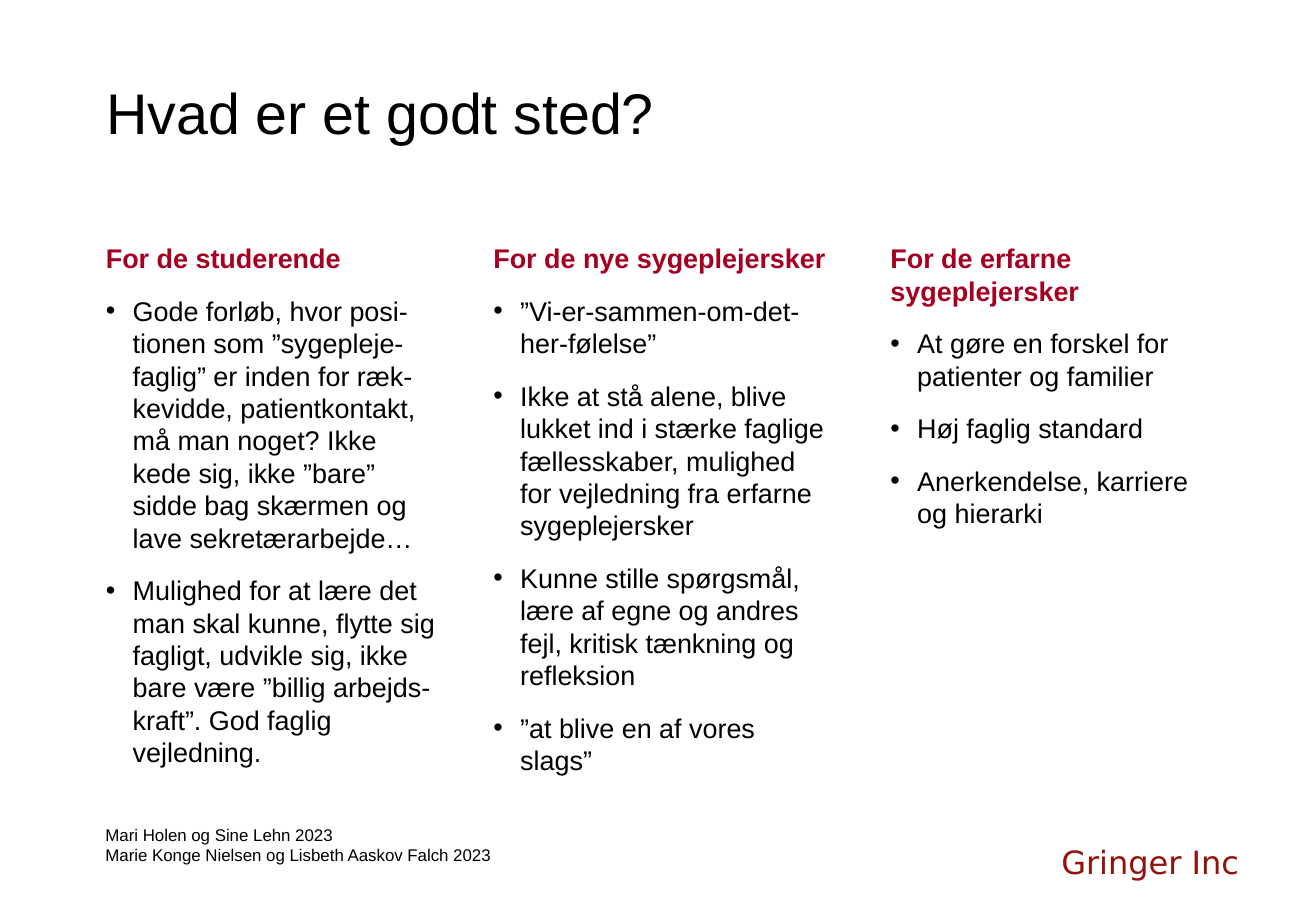
from lxml.etree import SubElement
from pptx import Presentation
from pptx.dml.color import RGBColor
from pptx.enum.text import MSO_ANCHOR, MSO_AUTO_SIZE, PP_ALIGN
from pptx.oxml.ns import qn
from pptx.util import Cm, Pt

TITLE = "Hvad er et godt sted?"
# Left edge in cm, heading, points
COLUMNS = [
    (1.96, "For de studerende", [
        "Gode forløb, hvor posi-tionen som ”sygepleje-faglig” er inden for ræk-kevidde, "
        "patientkontakt, må man noget? Ikke kede sig, ikke ”bare” sidde bag skærmen og "
        "lave sekretærarbejde…",
        "Mulighed for at lære det man skal kunne, flytte sig fagligt, udvikle sig, ikke "
        "bare være ”billig arbejds-kraft”. God faglig vejledning.",
    ]),
    (10.06, "For de nye sygeplejersker", [
        "”Vi-er-sammen-om-det-her-følelse”",
        "Ikke at stå alene, blive lukket ind i stærke faglige fællesskaber, mulighed for "
        "vejledning fra erfarne sygeplejersker",
        "Kunne stille spørgsmål, lære af egne og andres fejl, kritisk tænkning og refleksion",
        "”at blive en af vores slags”",
    ]),
    (18.36, "For de erfarne sygeplejersker", [
        "At gøre en forskel for patienter og familier",
        "Høj faglig standard",
        "Anerkendelse, karriere og hierarki",
    ]),
]
AUTHORS = [
    "Mari Holen og Sine Lehn 2023",
    "Marie Konge Nielsen og Lisbeth Aaskov Falch 2023",
]
ORGANISATION = "Gringer Inc"

BLACK = RGBColor(0x00, 0x00, 0x00)
WHITE = RGBColor(0xFF, 0xFF, 0xFF)
CRIMSON = RGBColor(0xA5, 0x00, 0x21)
BRICK = RGBColor(0x93, 0x13, 0x0C)
BULLET_INDENT = Cm(0.56)


def place(box, left, top, width, height, anchor=MSO_ANCHOR.TOP):
    box.left, box.top, box.width, box.height = Cm(left), Cm(top), Cm(width), Cm(height)
    frame = box.text_frame
    frame.word_wrap = True
    frame.auto_size = MSO_AUTO_SIZE.NONE
    frame.vertical_anchor = anchor
    return frame


def write(paragraph, text, size, color=BLACK, bold=False, font="Arial",
          align=PP_ALIGN.LEFT, before=0):
    paragraph.text = text
    paragraph.alignment = align
    paragraph.space_before = Pt(before)
    for run in paragraph.runs:
        run.font.name = font
        run.font.size = Pt(size)
        run.font.bold = bold
        run.font.color.rgb = color


def set_bullet(paragraph, bulleted):
    properties = paragraph._p.get_or_add_pPr()
    indent = BULLET_INDENT if bulleted else 0
    properties.set("marL", str(indent))
    properties.set("indent", str(-indent))
    if bulleted:
        SubElement(properties, qn("a:buFont"), typeface="Arial")
        SubElement(properties, qn("a:buChar"), char="•")
    else:
        SubElement(properties, qn("a:buNone"))


def fill_translucent(box):
    box.fill.solid()
    box.fill.fore_color.rgb = WHITE
    color = box._element.spPr.find(qn("a:solidFill"))[0]
    SubElement(color, qn("a:alpha"), val="75000")


def paragraphs(frame, count):
    while len(frame.paragraphs) < count:
        frame.add_paragraph()
    return frame.paragraphs


def main():
    prs = Presentation()
    prs.slide_width, prs.slide_height = Cm(27.51), Cm(19.05)
    slide = prs.slides.add_slide(prs.slide_layouts.get_by_name("Comparison"))
    title, *column_boxes, authors_box = slide.placeholders

    title_frame = place(title, 1.97, 0.74, 23.01, 3.18, MSO_ANCHOR.MIDDLE)
    write(title_frame.paragraphs[0], TITLE, 34)

    for box, (left, heading, points) in zip(column_boxes, COLUMNS):
        frame = place(box, left, 4.93, 7.49, 12.19)
        fill_translucent(box)
        first, *rest = paragraphs(frame, 1 + len(points))
        write(first, heading, 16, CRIMSON, bold=True, before=12)
        set_bullet(first, False)
        for paragraph, point in zip(rest, points):
            write(paragraph, point, 16, before=12)
            set_bullet(paragraph, True)

    authors_frame = place(authors_box, 1.95, 17.12, 8.79, 1.12)
    for paragraph, author in zip(paragraphs(authors_frame, len(AUTHORS)), AUTHORS):
        write(paragraph, author, 10)
        set_bullet(paragraph, False)

    organisation_box = slide.shapes.add_textbox(0, 0, 0, 0)
    organisation_frame = place(organisation_box, 21.77, 17.5, 4.55, 1.09)
    write(organisation_frame.paragraphs[0], ORGANISATION, 19, BRICK,
          font="DejaVu Sans", align=PP_ALIGN.CENTER)

    prs.save("out.pptx")


if __name__ == "__main__":
    main()
